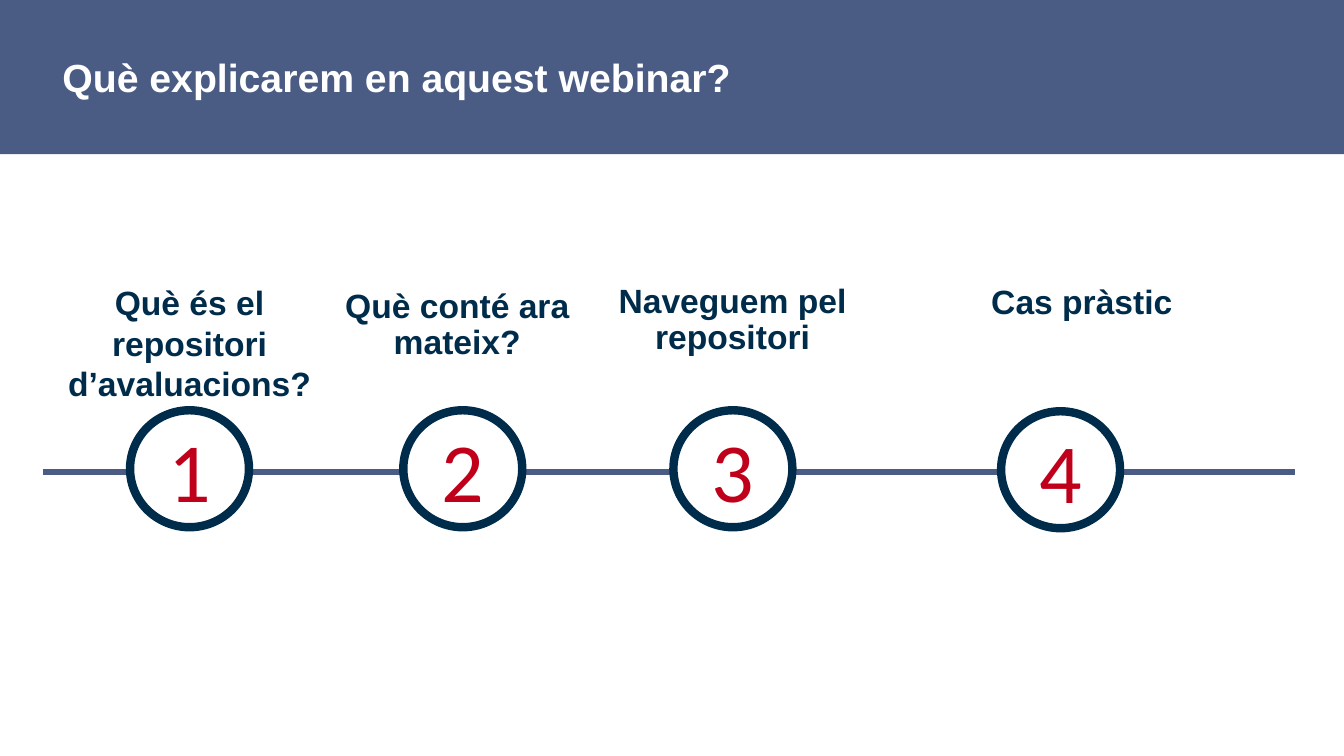
import pptx
import pptx.dml.color
import pptx.enum.shapes
import pptx.enum.text
import pptx.oxml.ns
import pptx.util
from lxml import etree

COLOURS = {"slate": "4A5C83", "navy": "002C4B", "red": "C0001B", "white": "FFFFFF"}
Align = pptx.enum.text.PP_ALIGN
Anchor = pptx.enum.text.MSO_ANCHOR
Preset = pptx.enum.shapes.MSO_SHAPE


def colour(name):
    return pptx.dml.color.RGBColor.from_string(COLOURS[name])


class WebinarSlide:
    """Places elements on a grid of 100 columns by 100 rows."""

    def __init__(self, deck):
        self.column = deck.slide_width / 100
        self.row = deck.slide_height / 100
        self.slide = deck.slides.add_slide(deck.slide_layouts[5])
        self.shapes = self.slide.shapes

    def box(self, left, top, width, height):
        return (round(left * self.column), round(top * self.row),
                round(width * self.column), round(height * self.row))

    def set_text(self, frame, text, size, ink, font="Arial", bold=True,
                 align=Align.CENTER, anchor=Anchor.TOP):
        frame.text = text
        frame.word_wrap = True
        frame.vertical_anchor = anchor
        paragraph = frame.paragraphs[0]
        paragraph.alignment = align
        style = paragraph.runs[0].font
        style.name, style.size, style.bold = font, pptx.util.Pt(size), bold
        style.color.rgb = colour(ink)
        return paragraph

    def shape(self, preset, place, fill, outline=None, weight=0):
        shape = self.shapes.add_shape(preset, *self.box(*place))
        shape.shadow.inherit = False
        shape.fill.solid()
        shape.fill.fore_color.rgb = colour(fill)
        if outline:
            shape.line.color.rgb = colour(outline)
            shape.line.width = pptx.util.Pt(weight)
        else:
            shape.line.fill.background()
        return shape

    def title(self, text, place):
        heading = self.shapes.title
        heading.left, heading.top, heading.width, heading.height = self.box(*place)
        frame = heading.text_frame
        frame.margin_left = frame.margin_right = 0
        frame.margin_top = frame.margin_bottom = 0
        paragraph = self.set_text(frame, text, 28, "white", align=Align.LEFT)
        paragraph.space_after = pptx.util.Pt(6)
        frame.auto_size = pptx.enum.text.MSO_AUTO_SIZE.NONE

    def band(self, height):
        band = self.shape(Preset.RECTANGLE, (0, 0, 100, height), "slate")
        # The band lies behind the title
        self.shapes.title._element.addprevious(band._element)

    def timeline(self, start, end, level):
        left, top, width, _ = self.box(start, level, end - start, 0)
        line = self.shapes.add_connector(
            pptx.enum.shapes.MSO_CONNECTOR.STRAIGHT, left, top, left + width, top)
        line.line.color.rgb = colour("slate")
        line.line.width = pptx.util.Pt(4.25)
        etree.SubElement(line._element.spPr, pptx.oxml.ns.qn("a:effectLst"))

    def label(self, text, place, spacing):
        label = self.shapes.add_textbox(*self.box(*place))
        paragraph = self.set_text(label.text_frame, text, 24, "navy")
        paragraph.line_spacing = spacing

    def step(self, number, left, top):
        circle = self.shape(Preset.OVAL, (left, top, 8.85, 15.47), "white", "navy", 6)
        self.set_text(circle.text_frame, str(number), 60, "red", font="Calibri",
                      bold=False, anchor=Anchor.MIDDLE)


# Topic, label place, line spacing, circle left and top
STEPS = [
    ("Què és el repositori d’avaluacions?", (2.25, 36.67, 23.71, 13.07), 1.0, 9.68, 54.27),
    ("Què conté ara mateix?", (22.66, 37.6, 22.73, 12.67), 0.9, 30.01, 54.27),
    ("Naveguem pel repositori", (43.14, 36.93, 22.73, 12.67), 0.9, 50.11, 54.27),
    ("Cas pràstic", (67.29, 36.53, 26.41, 11.73), 1.0, 74.49, 54.4),
]


def main():
    deck = pptx.Presentation()
    deck.slide_width = pptx.util.Inches(13.33)
    deck.slide_height = pptx.util.Inches(7.5)
    webinar = WebinarSlide(deck)

    # Heading
    webinar.band(20.4)
    webinar.title("Què explicarem en aquest webinar?", (4.65, 7.07, 90.1, 6.27))

    # Timeline with numbered steps
    webinar.timeline(3.23, 96.32, 62.4)
    for number, (topic, place, spacing, left, top) in enumerate(STEPS, 1):
        webinar.label(topic, place, spacing)
        webinar.step(number, left, top)

    deck.save("out.pptx")


if __name__ == "__main__":
    main()
